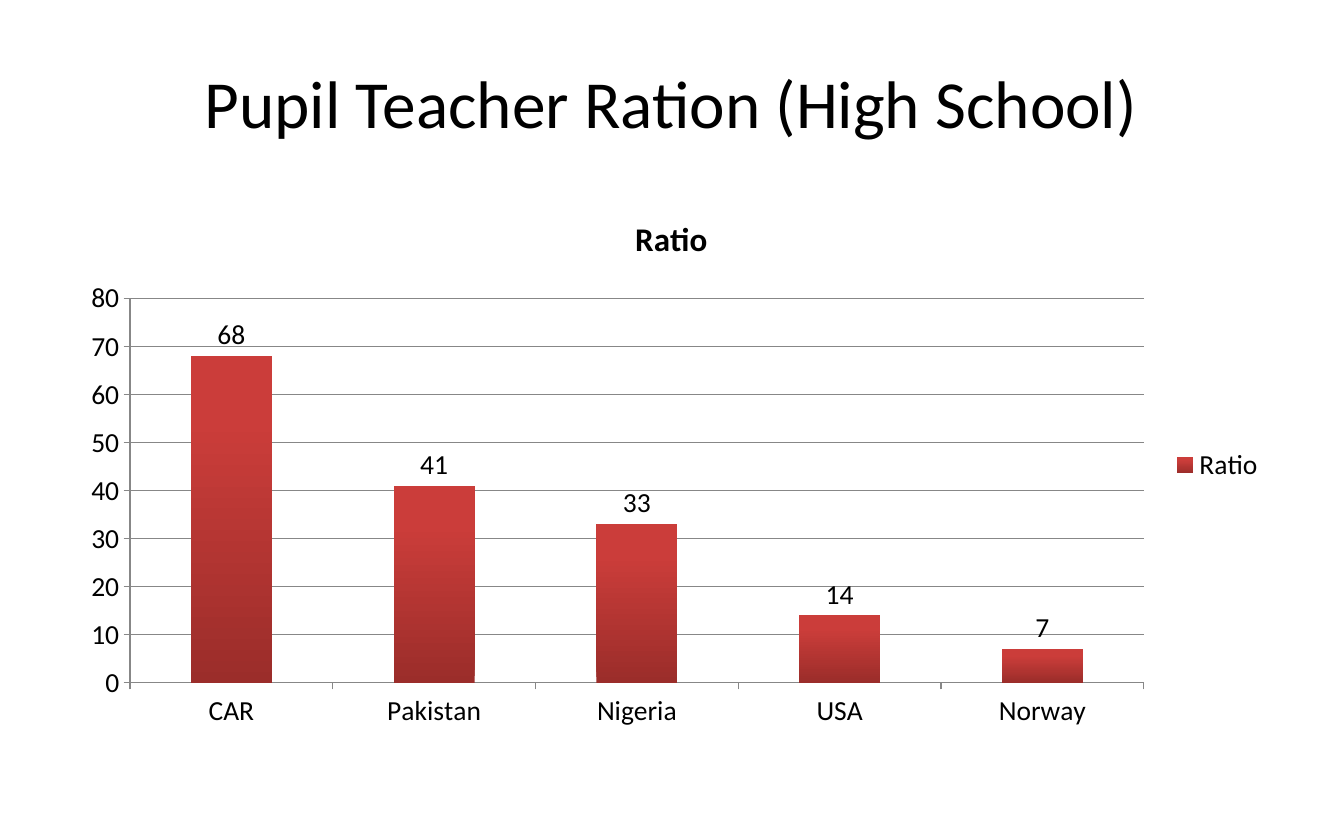
from pptx import Presentation
from pptx.chart.data import CategoryChartData
from pptx.dml.color import RGBColor
from pptx.enum.chart import XL_CHART_TYPE, XL_LABEL_POSITION, XL_LEGEND_POSITION, XL_TICK_MARK
from pptx.enum.text import MSO_ANCHOR, PP_ALIGN
from pptx.util import Inches, Pt

COLUMN = XL_CHART_TYPE.COLUMN_CLUSTERED
OUTSIDE_END = XL_LABEL_POSITION.OUTSIDE_END
RIGHT = XL_LEGEND_POSITION.RIGHT
TICK_OUT, TICK_NONE = XL_TICK_MARK.OUTSIDE, XL_TICK_MARK.NONE
MIDDLE, CENTER = MSO_ANCHOR.MIDDLE, PP_ALIGN.CENTER

TITLE = "Pupil Teacher Ration (High School)"
SERIES = "Ratio"
RATIOS = {"CAR": 68, "Pakistan": 41, "Nigeria": 33, "USA": 14, "Norway": 7}
FONT, BLACK, GRAY = "Calibri", "000000", "878787"
BAR_STOPS = [(0, "9B2D2A"), (0.8, "CB3D3A")]
LEFT, WIDTH = 0.61, 10.98


def rgb(color):
    return RGBColor.from_string(color)


def set_font(font, size, bold=False, color=BLACK):
    font.name, font.size, font.bold = FONT, Pt(size), bold
    font.color.rgb = rgb(color)


def add_text(tf, text, size, bold=False, color=BLACK, align=CENTER):
    p = tf.paragraphs[0]
    p.alignment = align
    r = p.add_run()
    r.text = text
    set_font(r.font, size, bold, color)


def set_line(line, color=GRAY, width=0.75):
    line.color.rgb = rgb(color)
    line.width = Pt(width)


prs = Presentation()
prs.slide_width, prs.slide_height = Inches(12.21), Inches(7.5)
s = prs.slides.add_slide(prs.slide_layouts[6])

tf = s.shapes.add_textbox(Inches(LEFT), Inches(0.3), Inches(WIDTH), Inches(1.25)).text_frame
tf.word_wrap = True
tf.vertical_anchor = MIDDLE
add_text(tf, TITLE, 44)

data = CategoryChartData()
data.categories = list(RATIOS)
data.add_series(SERIES, list(RATIOS.values()))
chart = s.shapes.add_chart(
    COLUMN, Inches(LEFT), Inches(1.75), Inches(WIDTH), Inches(4.95), data
).chart
set_font(chart.font, 18)
chart.has_title = True
chart.chart_title.include_in_layout = False
add_text(chart.chart_title.text_frame, SERIES, 21.6, bold=True)
chart.has_legend = True
chart.legend.position = RIGHT
chart.legend.include_in_layout = False

for axis in (chart.category_axis, chart.value_axis):
    axis.major_tick_mark, axis.minor_tick_mark = TICK_OUT, TICK_NONE
    set_line(axis.format.line)
chart.value_axis.minimum_scale = 0
chart.value_axis.maximum_scale = 80
chart.value_axis.major_unit = 10
chart.value_axis.has_major_gridlines = True
set_line(chart.value_axis.major_gridlines.format.line)

plot = chart.plots[0]
plot.vary_by_categories = False
plot.gap_width = 150
plot.has_data_labels = True
plot.data_labels.show_value = True
plot.data_labels.position = OUTSIDE_END
fill = plot.series[0].format.fill
fill.gradient()
fill.gradient_angle = 90
for stop, (position, color) in zip(fill.gradient_stops, BAR_STOPS):
    stop.position = position
    stop.color.rgb = rgb(color)

prs.save("out.pptx")
